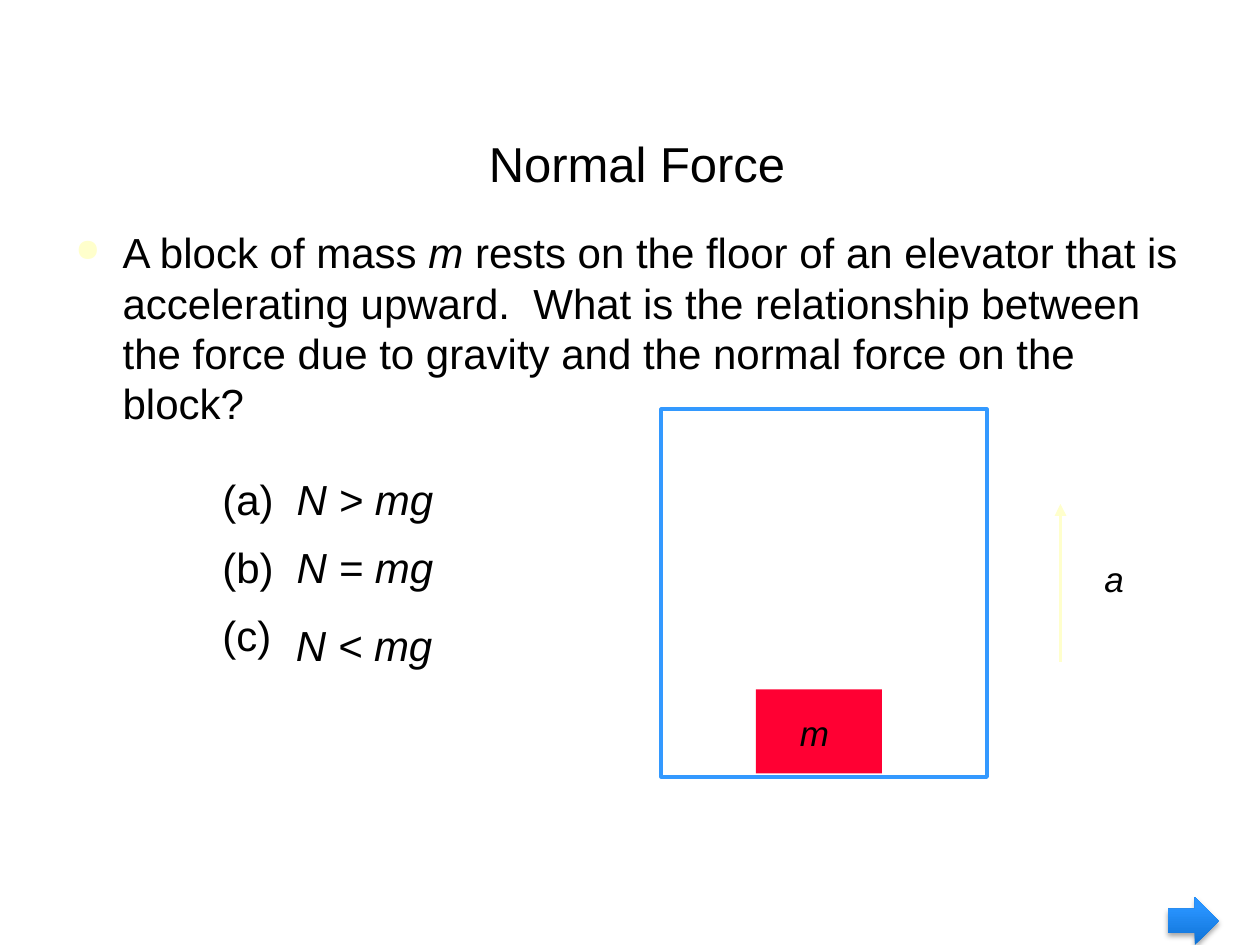
from lxml import etree
from pptx import Presentation
from pptx.dml import color
from pptx.enum import shapes, text
from pptx.oxml import ns
from pptx.util import Pt

BLACK, CREAM, BLUE, RED = "000000", "FFFFCC", "3399FF", "FF0033"


def rgb(value):
    """Turn a hex string into a colour."""
    return color.RGBColor.from_string(value)


def add_xml(parent, tag, **attributes):
    """Append a DrawingML element and return it."""
    return etree.SubElement(parent, ns.qn(f"a:{tag}"), attributes)


def format_span(span, size, italic=False):
    """Give a run its font."""
    font = span.font
    font.name, font.size, font.italic = "Arial", Pt(size), italic
    font.color.rgb = rgb(BLACK)


def add_spans(para, spans, size):
    """Add (wording, italic) runs to a paragraph."""
    for wording, italic in spans:
        span = para.add_run()
        span.text = wording
        format_span(span, size, italic)


def add_box(page, left, top, width, height):
    """Add a wrapping text box and return its frame."""
    frame = page.shapes.add_textbox(Pt(left), Pt(top), Pt(width), Pt(height)).text_frame
    frame.word_wrap = True
    return frame


def add_label(page, left, top, width, height, wording, size):
    """Place a one-line italic label."""
    frame = add_box(page, left, top, width, height)
    frame.margin_right = 0
    para = frame.paragraphs[0]
    para.line_spacing = 0.9
    add_spans(para, [(wording, True)], size)


def add_shape(page, kind, left, top, width, height, fill=None, line=None):
    """Add a flat preset shape."""
    shape = page.shapes.add_shape(kind, Pt(left), Pt(top), Pt(width), Pt(height))
    shape.shadow.inherit = False
    if fill:
        shape.fill.solid()
        shape.fill.fore_color.rgb = rgb(fill)
    else:
        shape.fill.background()
    if line:
        shape.line.color.rgb = rgb(line)
        shape.line.width = Pt(2.25)
    else:
        shape.line.fill.background()
    return shape


def set_title(page, left, top, width, height):
    """Move and format the title placeholder."""
    title = page.shapes.title
    title.left, title.top, title.width, title.height = map(Pt, (left, top, width, height))
    frame = title.text_frame
    frame.text = "Normal Force"
    frame.vertical_anchor = text.MSO_ANCHOR.MIDDLE
    para = frame.paragraphs[0]
    para.alignment = text.PP_ALIGN.CENTER
    format_span(para.runs[0], 28)


def add_question(page, left, top, width, height):
    """Place the bulleted question."""
    para = add_box(page, left, top, width, height).paragraphs[0]
    props = para._p.get_or_add_pPr()
    props.set("marL", str(Pt(27)))
    props.set("indent", str(Pt(-27)))
    add_xml(add_xml(props, "buClr"), "srgbClr", val=CREAM)
    add_xml(props, "buSzPct", val="75000")
    add_xml(props, "buChar", char="●")
    add_spans(para, [
        ("A block of mass ", False),
        ("m", True),
        (" rests on the floor of an elevator that is accelerating upward.  What is the "
         "relationship between the force due to gravity and the normal force on the block?", False),
    ], 24)


def add_answers(page, left, top, width, height):
    """Place the three answers, the last relation in a box of its own."""
    frame = add_box(page, left, top, width, height)
    answers = [("(a)\t", "N > mg"), ("(b)\t", "N = mg"), ("(c)", "")]
    for index, (letter, relation) in enumerate(answers):
        para = frame.add_paragraph() if index else frame.paragraphs[0]
        props = para._p.get_or_add_pPr()
        props.set("marL", str(Pt(42.5)))
        props.set("indent", str(Pt(-42.5)))
        para.line_spacing = 0.9
        if index:
            para.space_before = Pt(13)
        add_spans(para, [(letter, False)] + ([(relation, True)] if relation else []), 24)
    add_label(page, left + 42, top + 84, 114, 33, "N < mg", 24)


def add_elevator(page, left, top, width, height):
    """Draw the elevator, the block on its floor and the acceleration."""
    rectangle = shapes.MSO_SHAPE.RECTANGLE
    add_shape(page, rectangle, left, top, width, height, line=BLUE)
    add_shape(page, rectangle, left + 54, top + 160, 72, 48, fill=RED)
    add_label(page, left + 72, top + 172, 30, 29, "m", 20)
    arrow_x = left + width + 42
    arrow = page.shapes.add_connector(
        shapes.MSO_CONNECTOR.STRAIGHT, Pt(arrow_x), Pt(top + 144), Pt(arrow_x), Pt(top + 54))
    arrow.line.color.rgb = rgb(CREAM)
    arrow.line.width = Pt(2.25)
    add_xml(arrow.line._get_or_add_ln(), "tailEnd", type="triangle")
    add_xml(arrow._element.spPr, "effectLst")
    add_label(page, arrow_x + 18, top + 84, 42, 29, "a", 20)


def add_next_arrow(page, left, top, width, height):
    """Draw the shaded arrow in the corner."""
    arrow = add_shape(page, shapes.MSO_SHAPE.RIGHT_ARROW, left, top, width, height)
    arrow.fill.gradient()
    arrow.fill.gradient_angle = 90
    for stop, value, position in zip(arrow.fill.gradient_stops, ("0F72D5", "2994FF"), (0, 0.8)):
        stop.color.rgb = rgb(value)
        stop.position = position
    effects = arrow._element.spPr.find(ns.qn("a:effectLst"))
    shadow = add_xml(effects, "outerShdw", blurRad=str(Pt(3.1)), dist=str(Pt(1.8)),
                     dir="5400000", rotWithShape="0")
    add_xml(add_xml(shadow, "srgbClr", val=BLACK), "alpha", val="35000")


def main():
    """Build and save the slide."""
    deck = Presentation()
    deck.slide_width, deck.slide_height = Pt(720), Pt(540)
    page = deck.slides.add_slide(deck.slide_layouts[5])
    set_title(page, 70, 48, 588, 90)
    add_question(page, 36, 126, 648, 356)
    add_elevator(page, 378, 234, 186, 210)
    add_answers(page, 120, 270, 216, 115)
    add_next_arrow(page, 667.5, 512.5, 29, 27.5)
    deck.save("out.pptx")


if __name__ == "__main__":
    main()
